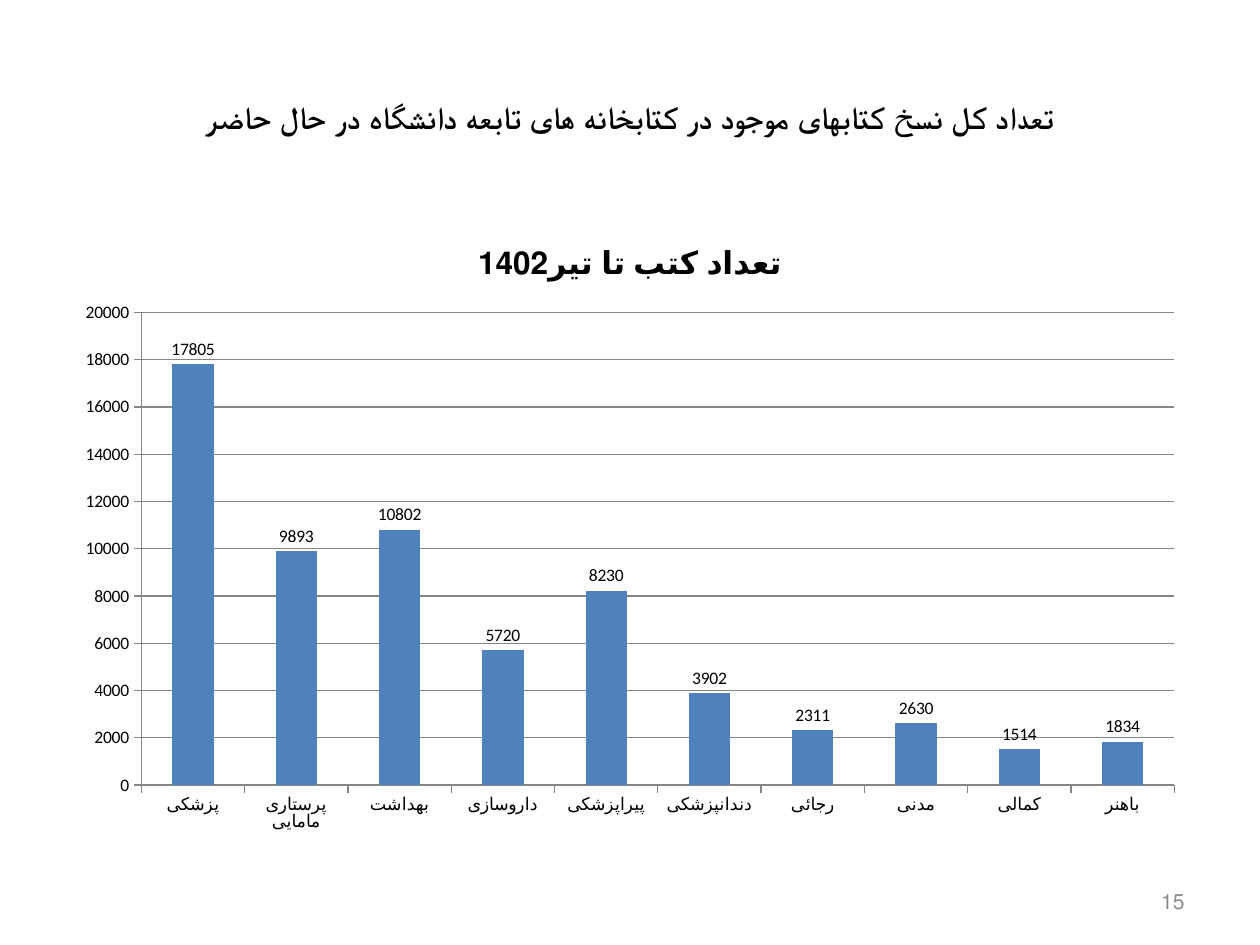
from pptx import Presentation
from pptx.chart.data import CategoryChartData
from pptx.dml.color import RGBColor
from pptx.enum.chart import XL_CHART_TYPE, XL_LABEL_POSITION, XL_TICK_MARK
from pptx.enum.text import MSO_ANCHOR, PP_ALIGN
from pptx.util import Inches, Pt

BLACK = RGBColor(0x00, 0x00, 0x00)
GRAY = RGBColor(0x8C, 0x8C, 0x8C)
LINE_GRAY = RGBColor(0x86, 0x86, 0x86)
BLUE = RGBColor(0x4F, 0x81, 0xBD)
COLUMNS = XL_CHART_TYPE.COLUMN_CLUSTERED
ABOVE = XL_LABEL_POSITION.OUTSIDE_END
TICK_OUT = XL_TICK_MARK.OUTSIDE
TICK_NONE = XL_TICK_MARK.NONE
MIDDLE = MSO_ANCHOR.MIDDLE
CENTER = PP_ALIGN.CENTER
RIGHT = PP_ALIGN.RIGHT

BOOKS = {
    "پزشکی": 17805,
    "پرستاری مامایی": 9893,
    "بهداشت": 10802,
    "داروسازی": 5720,
    "پیراپزشکی": 8230,
    "دندانپزشکی": 3902,
    "رجائی": 2311,
    "مدنی": 2630,
    "کمالی": 1514,
    "باهنر": 1834,
}


def write(para, text, *, size, font="Calibri", color=BLACK, bold=False, align=CENTER):
    para.alignment = align
    para._p.get_or_add_pPr().set("rtl", "1")
    span = para.add_run()
    span.text = text
    style_font(span.font, size, font, color, bold)


def style_font(target, size, font="Calibri", color=BLACK, bold=False):
    target.size = Pt(size)
    target.name = font
    target.bold = bold
    target.color.rgb = color


class SlideBuilder:
    def __init__(self, deck):
        self.page = deck.slides.add_slide(deck.slide_layouts[6])

    def text(self, text, left, top, width, height, **style):
        box = self.page.shapes.add_textbox(
            Inches(left), Inches(top), Inches(width), Inches(height)
        )
        frame = box.text_frame
        frame.word_wrap = True
        frame.vertical_anchor = MIDDLE
        write(frame.paragraphs[0], text, **style)

    def column_chart(self, title, values, left, top, width, height):
        data = CategoryChartData()
        data.categories = list(values)
        data.add_series("Series 1", list(values.values()))
        chart = self.page.shapes.add_chart(
            COLUMNS, Inches(left), Inches(top), Inches(width), Inches(height), data
        ).chart
        style_font(chart.font, 10)
        chart.has_legend = False
        chart.has_title = True
        chart.chart_title.include_in_layout = False
        write(chart.chart_title.text_frame.paragraphs[0], title,
              size=18, font="Arial", bold=True)

        plot = chart.plots[0]
        plot.gap_width = 150
        plot.vary_by_categories = False
        series = plot.series[0]
        series.format.fill.solid()
        series.format.fill.fore_color.rgb = BLUE
        plot.has_data_labels = True
        plot.data_labels.show_value = True
        plot.data_labels.position = ABOVE

        for axis in (chart.category_axis, chart.value_axis):
            axis.major_tick_mark = TICK_OUT
            axis.minor_tick_mark = TICK_NONE
            axis.format.line.color.rgb = LINE_GRAY
        scale = chart.value_axis
        scale.minimum_scale = 0
        scale.maximum_scale = 20000
        scale.major_unit = 2000
        scale.has_major_gridlines = True
        scale.major_gridlines.format.line.color.rgb = LINE_GRAY


def main():
    deck = Presentation()
    deck.slide_width = Inches(10)
    deck.slide_height = Inches(7.5)
    builder = SlideBuilder(deck)
    builder.text(
        "تعداد کل نسخ کتابهای موجود در کتابخانه های تابعه دانشگاه در حال حاضر",
        0.5, 0.3, 9, 1.25, size=18, font="Times New Roman", bold=True,
    )
    builder.column_chart("تعداد کتب تا تیر1402", BOOKS, 0.5, 1.75, 9, 4.95)
    builder.text("15", 7.17, 6.95, 2.33, 0.4, size=12, color=GRAY, align=RIGHT)
    deck.save("out.pptx")


if __name__ == "__main__":
    main()
